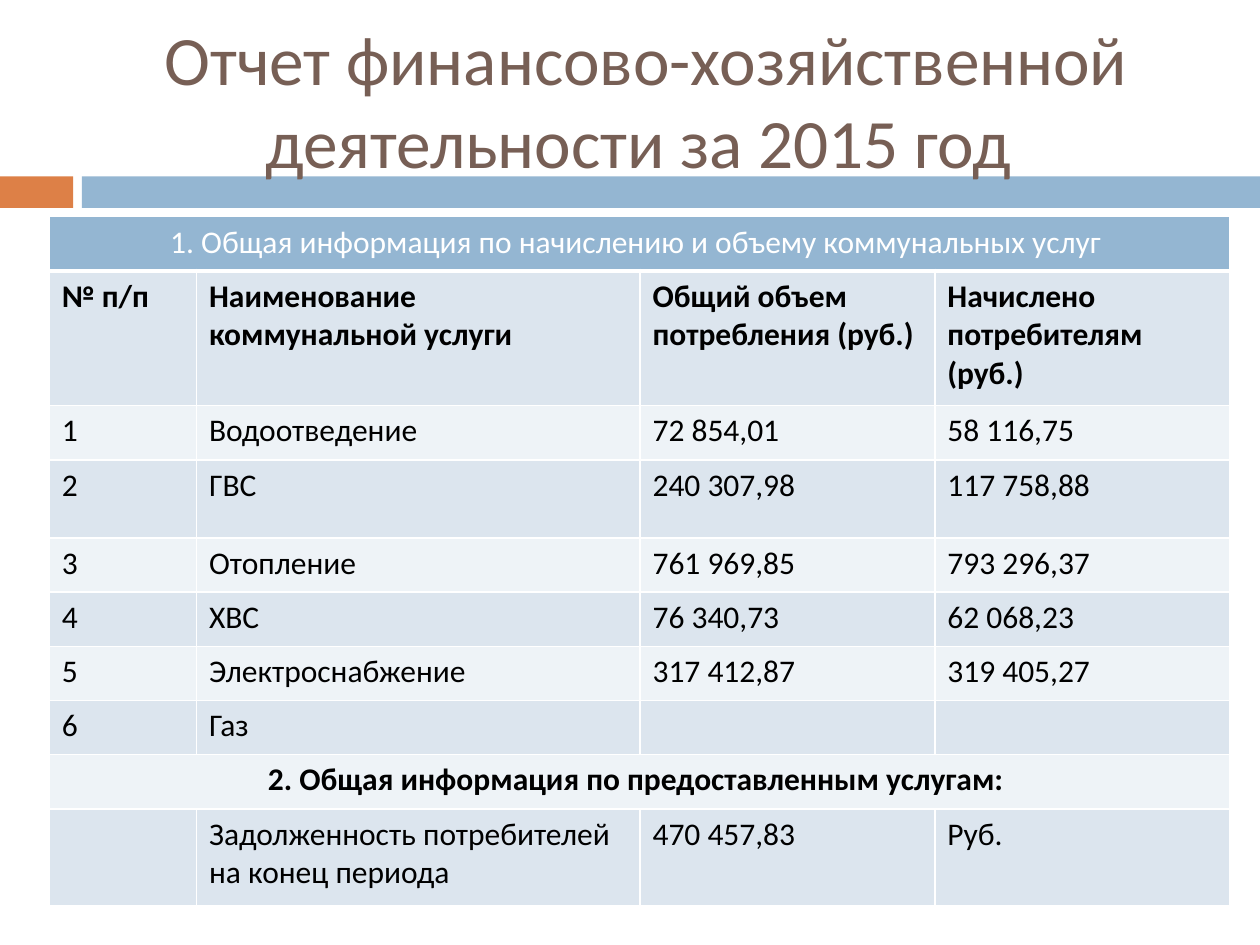
"""Build a slide with a financial report table on utility services."""
import dataclasses

import lxml.etree
import pptx
import pptx.dml.color
import pptx.enum.shapes
import pptx.enum.text
import pptx.oxml.ns
import pptx.util

Inches = pptx.util.Inches
CENTER = pptx.enum.text.PP_ALIGN.CENTER
LEFT = pptx.enum.text.PP_ALIGN.LEFT


@dataclasses.dataclass(frozen=True)
class Theme:
    font: str = "Calibri"
    title_size: float = 39.6
    table_size: float = 18
    title: str = "775F55"
    accent: str = "DD8047"
    header: str = "94B6D2"
    bands: tuple = ("EEF3F7", "DCE5EE")
    text: str = "000000"
    white: str = "FFFFFF"


class SlideBuilder:
    def __init__(self, slide, theme):
        self.slide = slide
        self.theme = theme

    def fill(self, target, color):
        target.fill.solid()
        target.fill.fore_color.rgb = pptx.dml.color.RGBColor.from_string(color)

    def set_text(self, text_frame, text, size, color, bold=False, alignment=LEFT):
        text_frame.text = text
        paragraph = text_frame.paragraphs[0]
        paragraph.alignment = alignment
        font = paragraph.font
        font.name, font.size, font.bold = self.theme.font, pptx.util.Pt(size), bold
        font.color.rgb = pptx.dml.color.RGBColor.from_string(color)

    def bar(self, left, top, width, height, color):
        shape = self.slide.shapes.add_shape(
            pptx.enum.shapes.MSO_SHAPE.RECTANGLE,
            Inches(left), Inches(top), Inches(width), Inches(height))
        shape.shadow.inherit = False
        self.fill(shape, color)
        shape.line.fill.background()

    def title(self, text, left, top, width, height):
        shape = self.slide.shapes.title
        shape.left, shape.top = Inches(left), Inches(top)
        shape.width, shape.height = Inches(width), Inches(height)
        frame = shape.text_frame
        frame.word_wrap = True
        frame.auto_size = pptx.enum.text.MSO_AUTO_SIZE.NONE
        frame.vertical_anchor = pptx.enum.text.MSO_ANCHOR.MIDDLE
        self.set_text(frame, text, self.theme.title_size, self.theme.title,
                      alignment=CENTER)
        shape.element.getparent().append(shape.element)

    def borders(self, cell, bottom_width):
        properties = cell._tc.get_or_add_tcPr()
        qn = pptx.oxml.ns.qn
        for side, width in (("L", 1), ("R", 1), ("T", 1), ("B", bottom_width)):
            line = lxml.etree.SubElement(
                properties, qn(f"a:ln{side}"), w=str(pptx.util.Pt(width)))
            solid = lxml.etree.SubElement(line, qn("a:solidFill"))
            lxml.etree.SubElement(solid, qn("a:srgbClr"), val=self.theme.white)

    def table(self, rows, left, top, widths, heights, bold_rows):
        table = self.slide.shapes.add_table(
            len(rows), len(widths), Inches(left), Inches(top),
            Inches(sum(widths)), Inches(sum(heights))).table
        for column, width in zip(table.columns, widths):
            column.width = Inches(width)
        for index, (values, height) in enumerate(zip(rows, heights)):
            table.rows[index].height = Inches(height)
            is_header, is_section = index == 0, len(values) == 1
            background = self.theme.header if is_header else self.theme.bands[index % 2]
            for cell in table.rows[index].cells:
                self.borders(cell, 3 if is_header else 1)
                self.fill(cell, background)
            if is_section:
                table.cell(index, 0).merge(table.cell(index, len(widths) - 1))
            for column, value in enumerate(values):
                self.set_text(table.cell(index, column).text_frame, value,
                              self.theme.table_size,
                              self.theme.white if is_header else self.theme.text,
                              index in bold_rows, CENTER if is_section else LEFT)


ROWS = [
    ["1. Общая информация по начислению и объему коммунальных услуг "],
    ["№ п/п", "Наименование коммунальной услуги",
     "Общий объем потребления (руб.)", "Начислено потребителям (руб.)"],
    ["1", "Водоотведение", "72 854,01", "58 116,75"],
    ["2", "ГВС", "240 307,98", "117 758,88"],
    ["3", "Отопление", "761 969,85", "793 296,37"],
    ["4", "ХВС", "76 340,73", "62 068,23"],
    ["5", "Электроснабжение", "317 412,87", "319 405,27"],
    ["6", "Газ", "", ""],
    ["2. Общая информация по предоставленным услугам: "],
    ["", "Задолженность потребителей на конец периода", "470 457,83", "Руб."],
]


def main():
    presentation = pptx.Presentation()
    presentation.slide_width, presentation.slide_height = Inches(10), Inches(7.5)
    theme = Theme()
    slide = presentation.slides.add_slide(presentation.slide_layouts[5])
    builder = SlideBuilder(slide, theme)
    builder.bar(0, 1.4, 0.58, 0.25, theme.accent)
    builder.bar(0.65, 1.4, 9.35, 0.25, theme.header)
    builder.title("Отчет финансово-хозяйственной деятельности за 2015 год ",
                  0.67, 0.25, 8.92, 1.08)
    heights = [0.43, 1.07, 0.43, 0.62] + [0.43] * 5 + [0.77]
    builder.table(ROWS, 0.39, 1.72, [1.17, 3.52, 2.34, 2.34], heights, bold_rows={1, 8})
    presentation.save("out.pptx")


if __name__ == "__main__":
    main()
